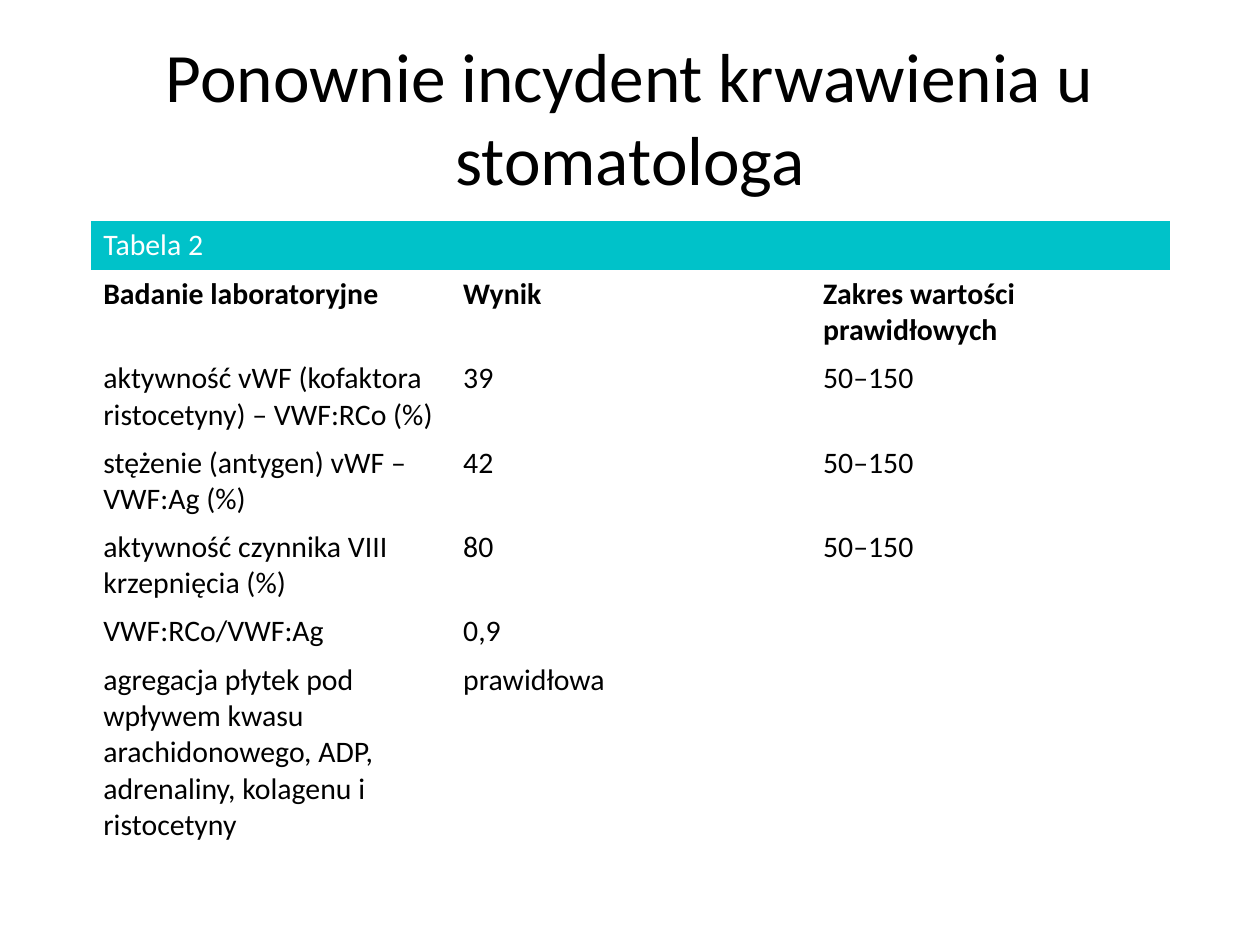
from pptx import Presentation, util as u
from pptx.dml.color import RGBColor
from pptx.enum import text
from pptx.oxml.ns import qn

WIDTH, HEIGHT = u.Inches(10), u.Inches(7.5)
COLORS = {"ink": "000000", "paper": "FFFFFF", "band": "00C2C9"}
FONT = "Calibri"
PLAIN_STYLE = "{2D5ABB26-0587-4C30-8999-92F81FD0307C}"
PADDING, LINE = 0.1, 0.285

TITLE = "Ponownie incydent krwawienia u stomatologa"
CAPTION = "Tabela 2"
RESULTS = [
    (2, "Badanie laboratoryjne", "Wynik", "Zakres wartości prawidłowych"),
    (2, "aktywność vWF (kofaktora ristocetyny) – VWF:RCo (%)", "39", "50–150"),
    (2, "stężenie (antygen) vWF – VWF:Ag (%)", "42", "50–150"),
    (2, "aktywność czynnika VIII krzepnięcia (%)", "80", "50–150"),
    (1, "VWF:RCo/VWF:Ag", "0,9", ""),
    (5, "agregacja płytek pod wpływem kwasu arachidonowego, ADP, "
        "adrenaliny, kolagenu i ristocetyny", "prawidłowa", ""),
]


def share(left, top, width, height):
    """Turn shares of the slide into a box of lengths."""
    return (int(left * WIDTH), int(top * HEIGHT),
            int(width * WIDTH), int(height * HEIGHT))


def style(para, size, color, bold=False):
    """Set the font of a whole paragraph."""
    font = para.font
    font.name, font.size, font.bold = FONT, u.Pt(size), bold
    font.color.rgb = RGBColor.from_string(COLORS[color])


def add_title(page, box):
    """Place the centred heading in its box."""
    frame = page.shapes.add_textbox(*box).text_frame
    frame.word_wrap = True
    frame.vertical_anchor = text.MSO_ANCHOR.MIDDLE
    para = frame.paragraphs[0]
    para.text = TITLE
    para.alignment = text.PP_ALIGN.CENTER
    style(para, 39.6, "ink")


def fill_cell(cell, words, fill="paper", color="ink", bold=False):
    """Write and colour one table cell."""
    cell.fill.solid()
    cell.fill.fore_color.rgb = RGBColor.from_string(COLORS[fill])
    para = cell.text_frame.paragraphs[0]
    para.text = words
    style(para, 17, color, bold)


def add_results(page, box):
    """Place the captioned table of laboratory results in its box."""
    lines = [1] + [row[0] for row in RESULTS]
    table = page.shapes.add_table(len(lines), 3, *box).table
    table.horz_banding = False
    table._tbl.tblPr.find(qn("a:tableStyleId")).text = PLAIN_STYLE
    for row, count in zip(table.rows, lines):
        row.height = u.Inches(PADDING + LINE * count)
    for column in range(3):
        fill_cell(table.cell(0, column), "", "band", "paper")
    caption = table.cell(0, 0)
    caption.merge(table.cell(0, 2))
    fill_cell(caption, CAPTION, "band", "paper")
    caption.vertical_anchor = text.MSO_ANCHOR.MIDDLE
    for index, (_, *values) in enumerate(RESULTS, 1):
        for column, words in enumerate(values):
            fill_cell(table.cell(index, column), words, bold=index == 1)


def main():
    """Build and save the slide."""
    deck = Presentation()
    deck.slide_width, deck.slide_height = WIDTH, HEIGHT
    page = deck.slides.add_slide(deck.slide_layouts[6])
    add_title(page, share(0.05, 0.04, 0.9, 1 / 6))
    add_results(page, share(0.072, 0.234, 0.857, 0.66))
    deck.save("out.pptx")


if __name__ == "__main__":
    main()
